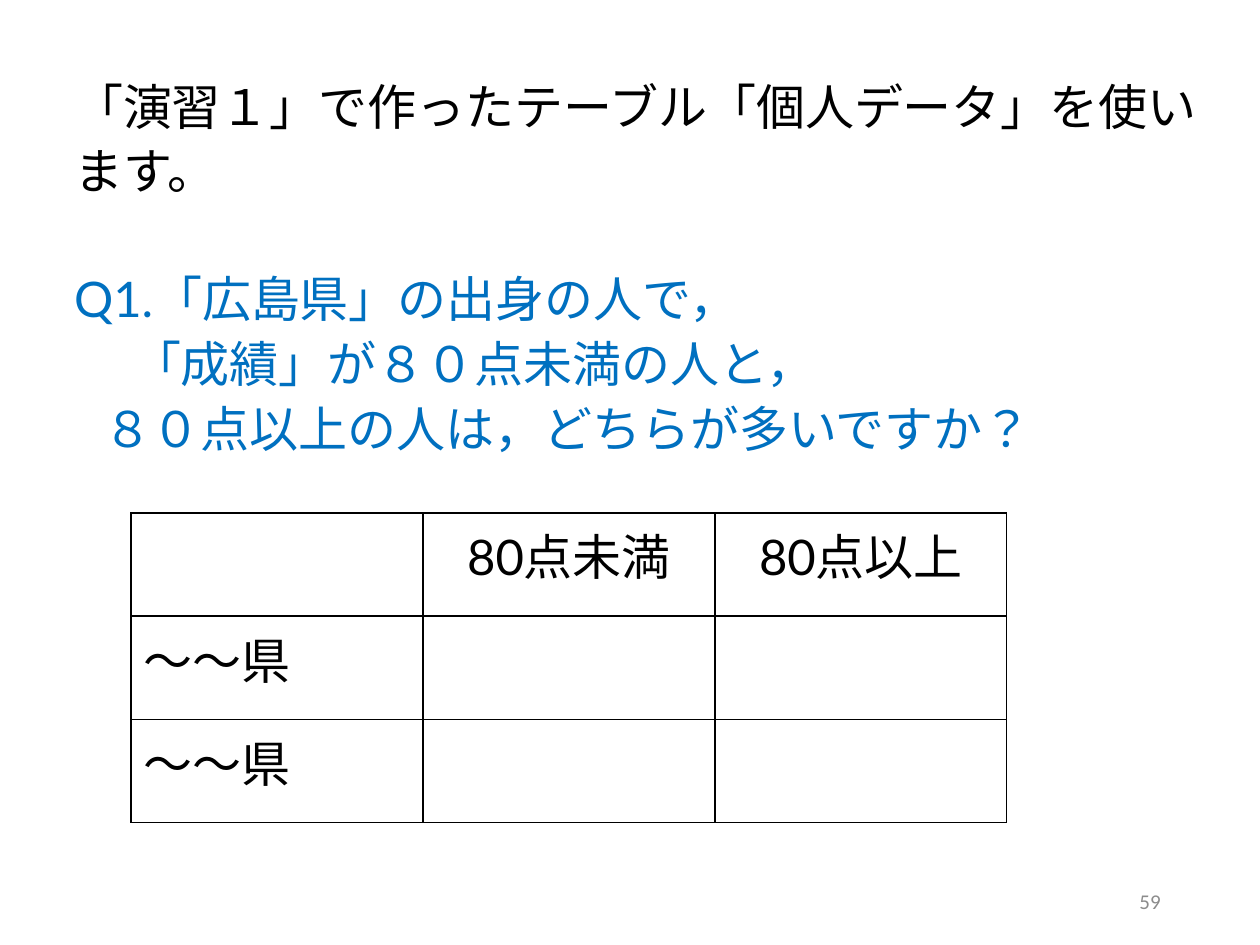
from dataclasses import dataclass

from lxml.etree import SubElement
from pptx import Presentation
from pptx.dml.color import RGBColor
from pptx.enum.lang import MSO_LANGUAGE_ID as Lang
from pptx.enum.text import MSO_ANCHOR as Anchor, PP_ALIGN as Align
from pptx.oxml.ns import qn
from pptx.util import Inches, Pt


@dataclass(frozen=True)
class Theme:
    ink: str = "000000"
    question: str = "0070C0"
    muted: str = "8C8C8C"
    body_font: str = "Lato"
    number_font: str = "Calibri"
    body_size: int = 28
    number_size: int = 12
    line_spacing: float = 1.1
    border_width: float = 1


THEME = Theme()


def add_run(paragraph, text, color=THEME.ink, font=THEME.body_font, size=THEME.body_size):
    run = paragraph.add_run()
    run.text = text
    run.font.name = font
    run.font.size = Pt(size)
    run.font.color.rgb = RGBColor.from_string(color)
    run.font.language_id = Lang.JAPANESE


def add_frame(slide, box, anchor=Anchor.TOP):
    frame = slide.shapes.add_textbox(*map(Inches, box)).text_frame
    frame.word_wrap = True
    frame.vertical_anchor = anchor
    return frame


def add_question(slide, box):
    # text, colour, left indent in inches, space before in points
    lines = [
        ("「演習１」で作ったテーブル「個人データ」を使います。", THEME.ink, 0, 0),
        ("Q1.「広島県」の出身の人で，", THEME.question, 0, 36),
        ("「成績」が８０点未満の人と，", THEME.question, 0.46, 0),
        ("８０点以上の人は，どちらが多いですか？", THEME.question, 0.23, 0),
    ]
    frame = add_frame(slide, box)
    for index, (text, color, indent, gap) in enumerate(lines):
        line = frame.add_paragraph() if index else frame.paragraphs[0]
        line.line_spacing = THEME.line_spacing
        line.space_before = Pt(gap)
        line._p.get_or_add_pPr().set("marL", str(Inches(indent)))
        add_run(line, text, color)


def outline_cell(cell):
    properties = cell._tc.get_or_add_tcPr()
    for position, side in enumerate(("lnL", "lnR", "lnT", "lnB")):
        border = properties.makeelement(qn(f"a:{side}"), {"w": str(Pt(THEME.border_width))})
        fill = SubElement(border, qn("a:solidFill"))
        SubElement(fill, qn("a:srgbClr"), val=THEME.ink)
        properties.insert(position, border)


def add_answer_table(slide, box):
    rows = [
        ("", "80点未満", "80点以上"),
        ("〜〜県", "", ""),
        ("〜〜県", "", ""),
    ]
    table = slide.shapes.add_table(len(rows), len(rows[0]), *map(Inches, box)).table
    table.first_row = table.horz_banding = False
    for row_index, row in enumerate(rows):
        for column_index, text in enumerate(row):
            cell = table.cell(row_index, column_index)
            cell.fill.background()
            outline_cell(cell)
            if text:
                label = cell.text_frame.paragraphs[0]
                label.alignment = Align.LEFT if row_index else Align.CENTER
                add_run(label, text)


def add_page_number(slide, box):
    number = add_frame(slide, box, Anchor.MIDDLE).paragraphs[0]
    number.alignment = Align.RIGHT
    add_run(number, "59", THEME.muted, THEME.number_font, THEME.number_size)


def main():
    deck = Presentation()
    deck.slide_width, deck.slide_height = Inches(10), Inches(7.5)
    slide = deck.slides.add_slide(deck.slide_layouts[6])

    add_page_number(slide, (7.06, 6.95, 2.25, 0.4))
    add_question(slide, (0.49, 0.51, 9.34, 3.42))
    add_answer_table(slide, (1.04, 4.07, 6.95, 2.46))

    deck.save("out.pptx")


if __name__ == "__main__":
    main()
